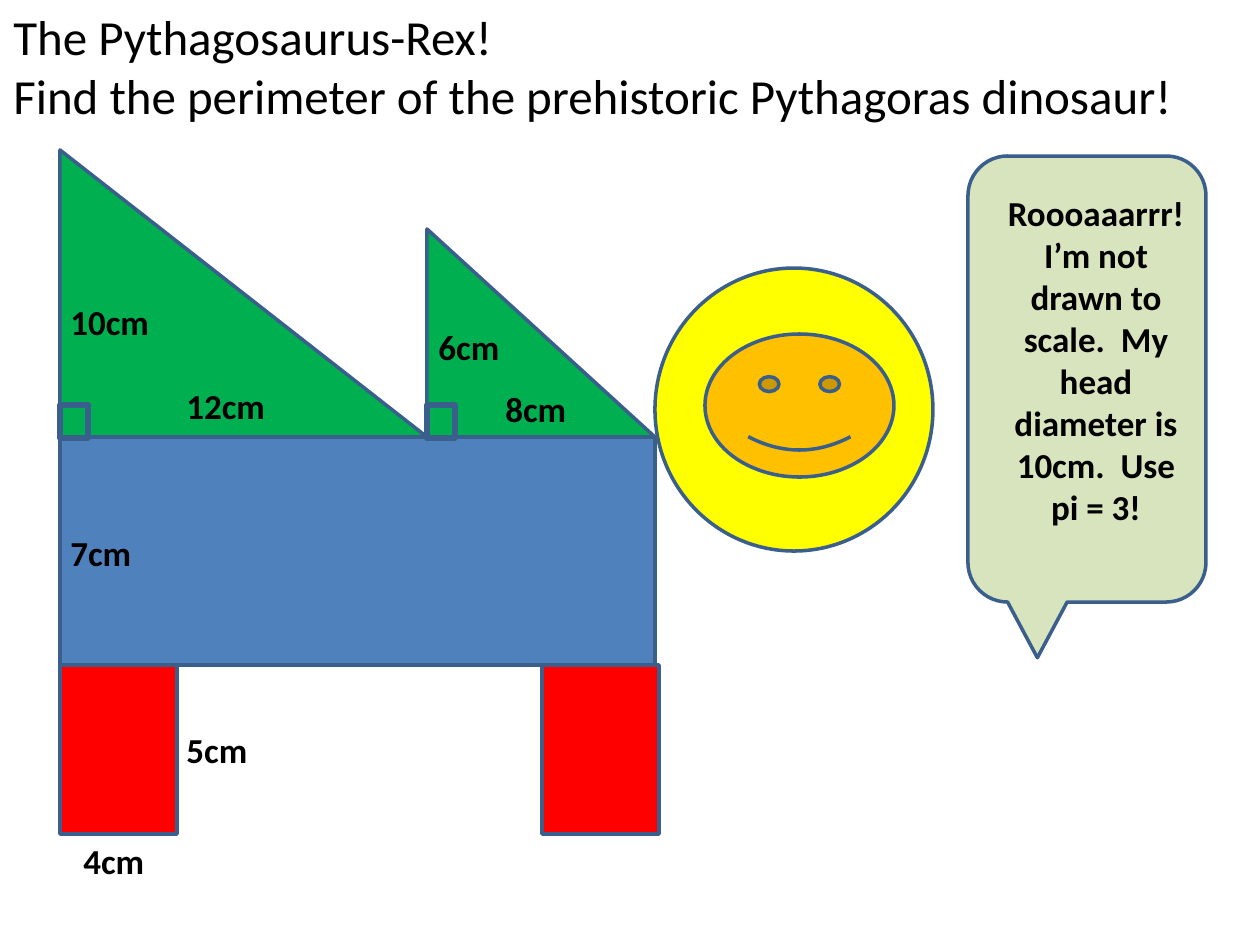
"""Build the Pythagosaurus-Rex perimeter slide."""
from typing import NamedTuple

from pptx import Presentation
from pptx.dml.color import RGBColor
from pptx.enum.shapes import MSO_SHAPE as Shp
from pptx.enum.text import MSO_AUTO_SIZE as Fit, PP_ALIGN as Al
from pptx.util import Emu, Pt

PX_PER_INCH = 126
LEFT, NECK, SPLIT = 60, 655, 427
BACK, BELLY = 437, 665
GREEN, RED, OUTLINE = "00B050", "FF0000", "3A5F8C"
LABEL_W, LABEL_H = 139, 55


class Part(NamedTuple):
    kind: Shp
    x: int
    y: int
    w: int
    h: int
    fill: str
    line: int = 2


class Note(NamedTuple):
    lines: tuple[str, ...]
    x: int
    y: int
    w: int = LABEL_W
    h: int = LABEL_H
    size: int = 20
    bold: bool = True
    align: Al = Al.LEFT


PARTS = [
    Part(Shp.RECTANGLE, LEFT, BACK, NECK - LEFT, BELLY - BACK, "4F81BD"),
    Part(Shp.RIGHT_TRIANGLE, SPLIT, 229, NECK - SPLIT, BACK - 229, GREEN),
    Part(Shp.RIGHT_TRIANGLE, LEFT, 150, SPLIT - LEFT, BACK - 150, GREEN),
    Part(Shp.OVAL, NECK, 268, 278, 283, "FFFF00"),
    Part(Shp.SMILEY_FACE, 705, 334, 189, 143, "FFC000"),
    *(Part(Shp.RECTANGLE, x, BELLY, 117, 169, RED) for x in (LEFT, 542)),
    *(Part(Shp.RECTANGLE, x, 405, 28, 33, GREEN, 3) for x in (SPLIT, LEFT)),
    Part(Shp.ROUNDED_RECTANGULAR_CALLOUT, 968, 156, 238, 446, "D7E4BD"),
]

NOTES = [
    Note(("The Pythagosaurus-Rex!",
          "Find the perimeter of the prehistoric Pythagoras dinosaur!"),
         1, 0, 1235, 131, size=28, bold=False),
    Note(("10cm",), 58, 294),
    Note(("12cm",), 174, 378),
    Note(("8cm",), 493, 381),
    Note(("6cm",), 426, 319),
    Note(("7cm",), 58, 525),
    Note(("5cm",), 174, 722),
    Note(("4cm",), 71, 833),
    Note(("Roooaaarrr!",
          "I’m not drawn to scale.  My head diameter is 10cm.  Use pi = 3!"),
         987, 185, 218, 352, align=Al.CENTER),
]


def px(n: int) -> Emu:
    """Turn pixels into EMU."""
    return Emu(round(n * 914400 / PX_PER_INCH))


def rgb(value: str) -> RGBColor:
    """Turn a hex string into a colour."""
    return RGBColor.from_string(value)


def draw_part(s, part: Part) -> None:
    """Draw one filled and outlined shape."""
    sp = s.shapes.add_shape(part.kind, *map(px, part[1:5]))
    sp.shadow.inherit = False
    sp.fill.solid()
    sp.fill.fore_color.rgb = rgb(part.fill)
    sp.line.color.rgb = rgb(OUTLINE)
    sp.line.width = Pt(part.line)


def draw_note(s, note: Note) -> None:
    """Draw one text box with a paragraph per line."""
    tf = s.shapes.add_textbox(*map(px, note[1:5])).text_frame
    tf.word_wrap = True
    tf.auto_size = Fit.SHAPE_TO_FIT_TEXT
    for i, line in enumerate(note.lines):
        p = tf.add_paragraph() if i else tf.paragraphs[0]
        p.alignment = note.align
        r = p.add_run()
        r.text = line
        r.font.name = "Calibri"
        r.font.size = Pt(note.size)
        r.font.bold = note.bold
        r.font.color.rgb = rgb("000000")


def main() -> None:
    """Build and save the slide."""
    prs = Presentation()
    prs.slide_width, prs.slide_height = px(1260), px(945)
    s = prs.slides.add_slide(prs.slide_layouts[6])
    for part in PARTS:
        draw_part(s, part)
    for note in NOTES:
        draw_note(s, note)
    prs.save("out.pptx")


if __name__ == "__main__":
    main()
